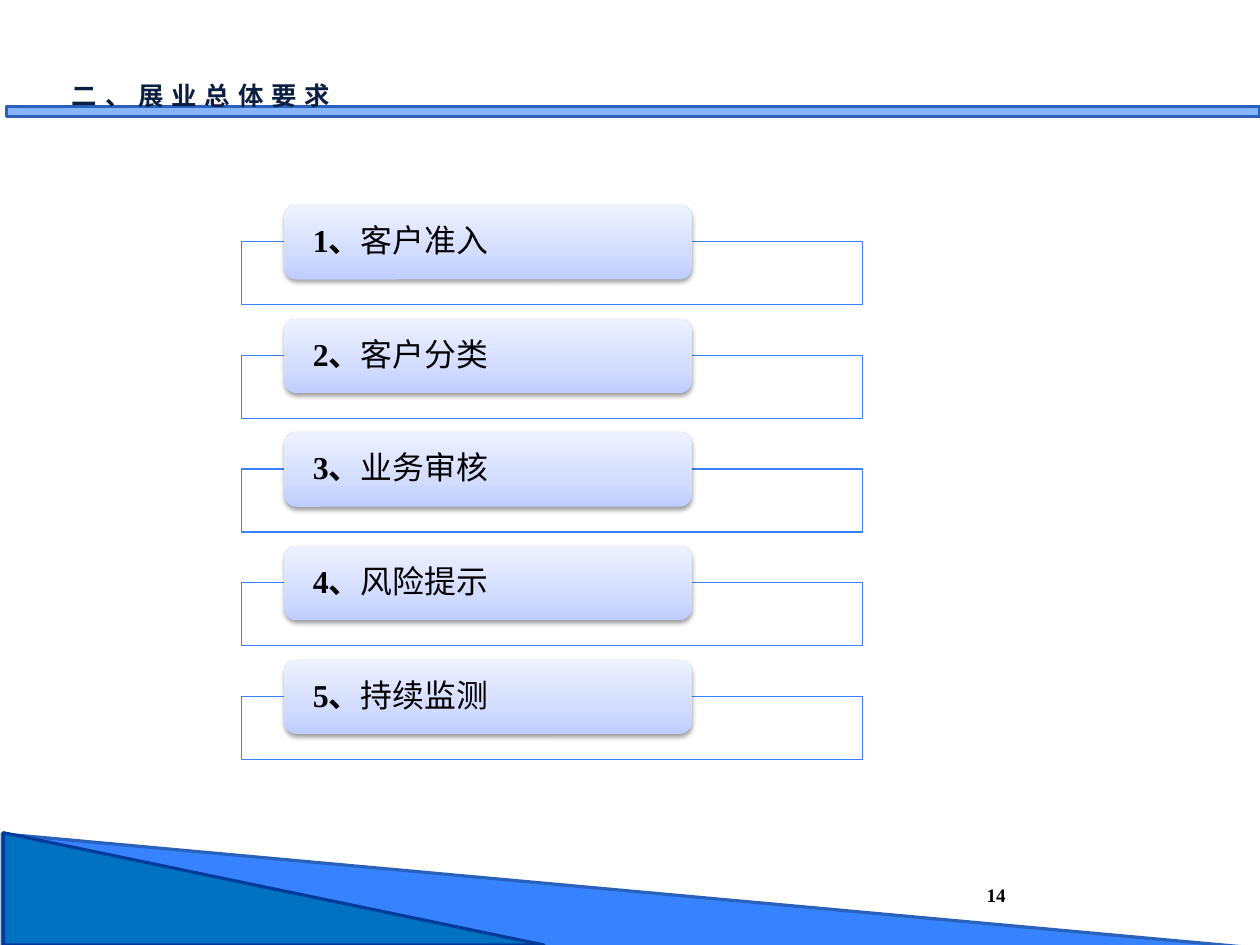
"""Builds the slide listing the five overall requirements."""
import dataclasses

import lxml.etree
import pptx
import pptx.dml.color
import pptx.enum.shapes
import pptx.enum.text
import pptx.oxml
import pptx.oxml.ns
import pptx.util

KIND = pptx.enum.shapes.MSO_SHAPE
ALIGN = pptx.enum.text.PP_ALIGN
ANCHOR = pptx.enum.text.MSO_ANCHOR


@dataclasses.dataclass(frozen=True)
class Theme:
    """Colours, fonts, type sizes and grid of the slide."""
    cols: float = 110
    rows: float = 82.5
    cell: float = 0.1
    sans: str = "Noto Sans CJK SC"
    serif: str = "Times New Roman"
    title: int = 16
    body: int = 20
    small: int = 12
    black: str = "000000"
    white: str = "FFFFFF"
    navy: str = "0C1E42"
    blue: str = "3783FF"
    edge: str = "2961BD"
    deep: str = "0070C0"
    rim: str = "003B9B"
    pale: str = "87B5FF"
    fade: tuple = ((0, "BFCDFF"), (35, "D2DCFF"), (100, "EEF2FF"))


def rgb(code):
    """Turn a hex code into a colour."""
    return pptx.dml.color.RGBColor.from_string(code)


def node(up, tag, **attrs):
    """Add a drawing element below another."""
    return lxml.etree.SubElement(up, pptx.oxml.ns.qn(tag), attrs)


def write(shape, *parts, size, color, latin, asian, align=ALIGN.LEFT,
          anchor=ANCHOR.TOP, inset=(0.1, 0.05), wrap=False, gap=0, lead=1.0):
    """Write (text, bold) parts as one formatted paragraph."""
    frame = shape.text_frame
    frame.word_wrap = wrap
    frame.vertical_anchor = anchor
    frame.margin_left = frame.margin_right = pptx.util.Inches(inset[0])
    frame.margin_top = frame.margin_bottom = pptx.util.Inches(inset[1])
    para = frame.paragraphs[0]
    para.alignment = align
    para.line_spacing = lead
    for text, bold in parts:
        run = para.add_run()
        run.text = text
        font = run.font
        font.size = pptx.util.Pt(size)
        font.bold = bold
        font.name = latin
        font.color.rgb = rgb(color)
        props = run._r.get_or_add_rPr()
        node(props, "a:ea", typeface=asian)
        if gap:
            props.set("spc", str(gap * 100))


class Deck:
    """Holds the theme and the current slide."""

    def __init__(self, theme):
        """Open a blank slide sized by the grid."""
        self.theme = theme
        self.show = pptx.Presentation()
        self.show.slide_width, self.show.slide_height = self.span(theme.cols, theme.rows)
        self.slide = self.show.slides.add_slide(self.show.slide_layouts[6])

    def span(self, *cells):
        """Turn grid cells into lengths."""
        return [pptx.util.Inches(n * self.theme.cell) for n in cells]

    def shape(self, kind, box, fill=None, line=None, width=2.0, alpha=None):
        """Add a flat shape at a grid box."""
        item = self.slide.shapes.add_shape(kind, *self.span(*box))
        if fill:
            item.fill.solid()
            item.fill.fore_color.rgb = rgb(fill)
        if alpha:
            tint = next(item._element.spPr.iter(pptx.oxml.ns.qn("a:srgbClr")))
            node(tint, "a:alpha", val=str(alpha * 1000))
        if line:
            item.line.color.rgb = rgb(line)
            item.line.width = pptx.util.Pt(width)
        else:
            item.line.fill.background()
        item.shadow.inherit = False
        return item

    def pill(self, box):
        """Add a rounded shape with a gradient and a soft shadow."""
        item = self.shape(KIND.ROUNDED_RECTANGLE, box)
        item.fill.gradient()
        item.fill.gradient_angle = 90
        props = item._element.spPr
        stops = next(props.iter(pptx.oxml.ns.qn("a:gsLst")))
        for old in list(stops):
            stops.remove(old)
        for place, code in self.theme.fade:
            stop = node(stops, "a:gs", pos=str(place * 1000))
            node(stop, "a:srgbClr", val=code)
        glow = node(props.find(pptx.oxml.ns.qn("a:effectLst")), "a:outerShdw",
                    blurRad=str(pptx.util.Pt(3.1)), dist=str(pptx.util.Pt(1.6)),
                    dir="5400000", rotWithShape="0")
        tint = node(glow, "a:srgbClr", val=self.theme.black)
        node(tint, "a:alpha", val="38000")
        return item

    def text(self, box, *parts, **style):
        """Add a text box at a grid box."""
        write(self.slide.shapes.add_textbox(*self.span(*box)), *parts, **style)

    def entry(self, top, label, name):
        """Add one numbered heading over its frame."""
        look = self.theme
        self.shape(KIND.RECTANGLE, (21.1, top + 3.2, 54.2, 5.5), look.white,
                   look.blue, width=0.75, alpha=90)
        write(self.pill((24.8, top, 35.6, 6.5)), (label, True), (name, False),
              size=look.body, color=look.black, latin=look.serif, asian=look.sans,
              anchor=ANCHOR.MIDDLE, inset=(0.22, 0.03), wrap=True, lead=0.9)


def main():
    """Build and save the slide."""
    look = Theme()
    deck = Deck(look)
    deck.shape(KIND.RIGHT_TRIANGLE, (0.2, 72.8, 109.8, 10), look.blue, look.edge)
    deck.shape(KIND.RIGHT_TRIANGLE, (0.3, 72.7, 47.2, 9.8), look.deep, look.rim)
    deck.shape(KIND.RECTANGLE, (0.6, 9.3, 109.4, 0.9), look.pale, look.edge)
    deck.text((5.3, 6.5, 25.6, 3.7), ("二、展业总体要求", True), size=look.title,
              color=look.navy, latin=look.sans, asian=look.sans, gap=5)
    names = ("客户准入", "客户分类", "业务审核", "风险提示", "持续监测")
    for i, name in enumerate(names):
        deck.entry(17.9 + 9.92 * i, f"{i + 1}、", name)
    deck.text((83.3, 74.9, 4.5, 4.2), ("14", True), size=look.small,
              color=look.black, latin=look.serif, asian=look.sans,
              align=ALIGN.RIGHT, anchor=ANCHOR.BOTTOM, inset=(0, 0))
    deck.show.save("out.pptx")


if __name__ == "__main__":
    main()
